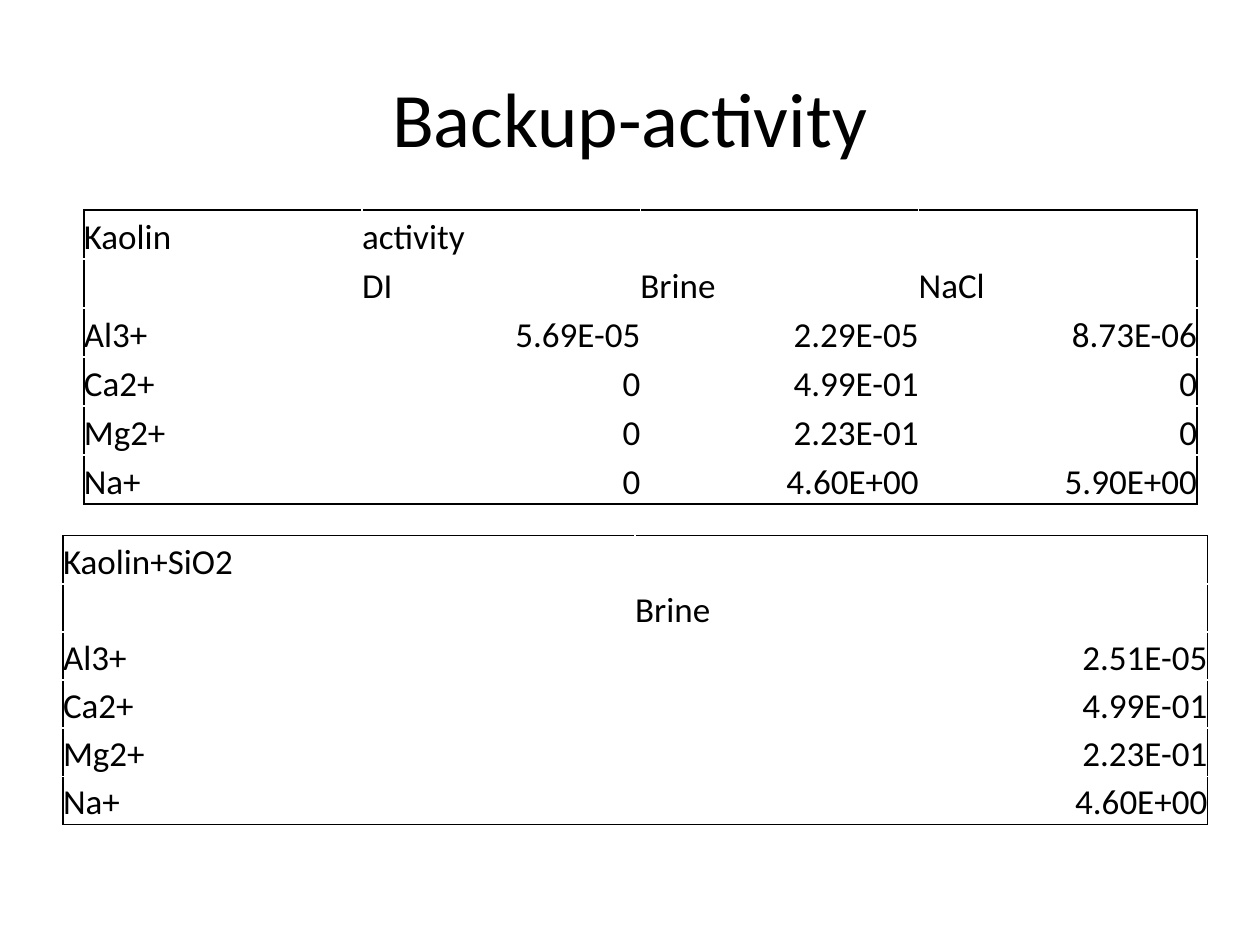
from lxml.etree import SubElement as Sub
from pptx import Presentation
from pptx.dml.color import RGBColor
from pptx.enum.text import MSO_ANCHOR as Anchor, PP_ALIGN as Align
from pptx.oxml.ns import qn
from pptx.util import Cm, Pt

BLACK = RGBColor(0, 0, 0)
INSETS = ("margin_left", "margin_right", "margin_top", "margin_bottom")
CELL = {"vertical_anchor": Anchor.BOTTOM, **dict.fromkeys(INSETS, 0)}
PLAIN = {"first_row": False, "horz_banding": False}
TITLE = {"word_wrap": True, "vertical_anchor": Anchor.MIDDLE}

KAOLIN = [
    ["Kaolin", "activity", "", ""],
    ["", "DI", "Brine", "NaCl"],
    ["Al3+", "5.69E-05", "2.29E-05", "8.73E-06"],
    ["Ca2+", "0", "4.99E-01", "0"],
    ["Mg2+", "0", "2.23E-01", "0"],
    ["Na+", "0", "4.60E+00", "5.90E+00"],
]
SILICA = [
    ["Kaolin+SiO2", ""],
    ["", "Brine"],
    ["Al3+", "2.51E-05"],
    ["Ca2+", "4.99E-01"],
    ["Mg2+", "2.23E-01"],
    ["Na+", "4.60E+00"],
]


def apply(item, form):
    """Set each attribute named in form."""
    for name, value in form.items():
        setattr(item, name, value)


def write(para, text, size, align):
    """Write text into a paragraph in the slide's font."""
    para.text = text
    para.alignment = align
    apply(para.font, {"name": "Calibri", "size": Pt(size)})
    para.font.color.rgb = BLACK


def edge(cell, side):
    """Draw a thin black border on one side of a cell."""
    line = Sub(cell._tc.get_or_add_tcPr(), qn(f"a:ln{side}"), w=str(Pt(1)))
    fill = Sub(line, qn("a:solidFill"))
    Sub(fill, qn("a:srgbClr"), val=str(BLACK))


def add_title(slide, box, text):
    """Place the centred title in its box."""
    frame = slide.shapes.add_textbox(*box).text_frame
    apply(frame, TITLE)
    write(frame.paragraphs[0], text, 44, Align.CENTER)


def add_grid(slide, box, data):
    """Place a framed table whose equal cells fill the box."""
    rows, cols = len(data), len(data[0])
    table = slide.shapes.add_table(rows, cols, *box).table
    apply(table, PLAIN)
    for r, row in enumerate(data):
        for c, text in enumerate(row):
            cell = table.cell(r, c)
            apply(cell, CELL)
            number = r > 1 and c > 0
            align = Align.RIGHT if number else Align.LEFT
            write(cell.text_frame.paragraphs[0], text, 20, align)
            outer = {"L": c == 0, "R": c == cols - 1,
                     "T": r == 0, "B": r == rows - 1}
            for side, drawn in outer.items():
                if drawn:
                    edge(cell, side)
            cell.fill.background()


def main():
    """Build and save the slide."""
    deck = Presentation()
    apply(deck, {"slide_width": Cm(25.4), "slide_height": Cm(19.05)})
    slide = deck.slides.add_slide(deck.slide_layouts[6])
    add_title(slide, (Cm(1.27), Cm(0.76), Cm(22.86), Cm(3.18)),
              "Backup-activity")
    add_grid(slide, (Cm(1.69), Cm(4.23), Cm(22.44), Cm(5.93)), KAOLIN)
    add_grid(slide, (Cm(1.27), Cm(10.8), Cm(23.07), Cm(5.82)), SILICA)
    deck.save("out.pptx")


if __name__ == "__main__":
    main()
